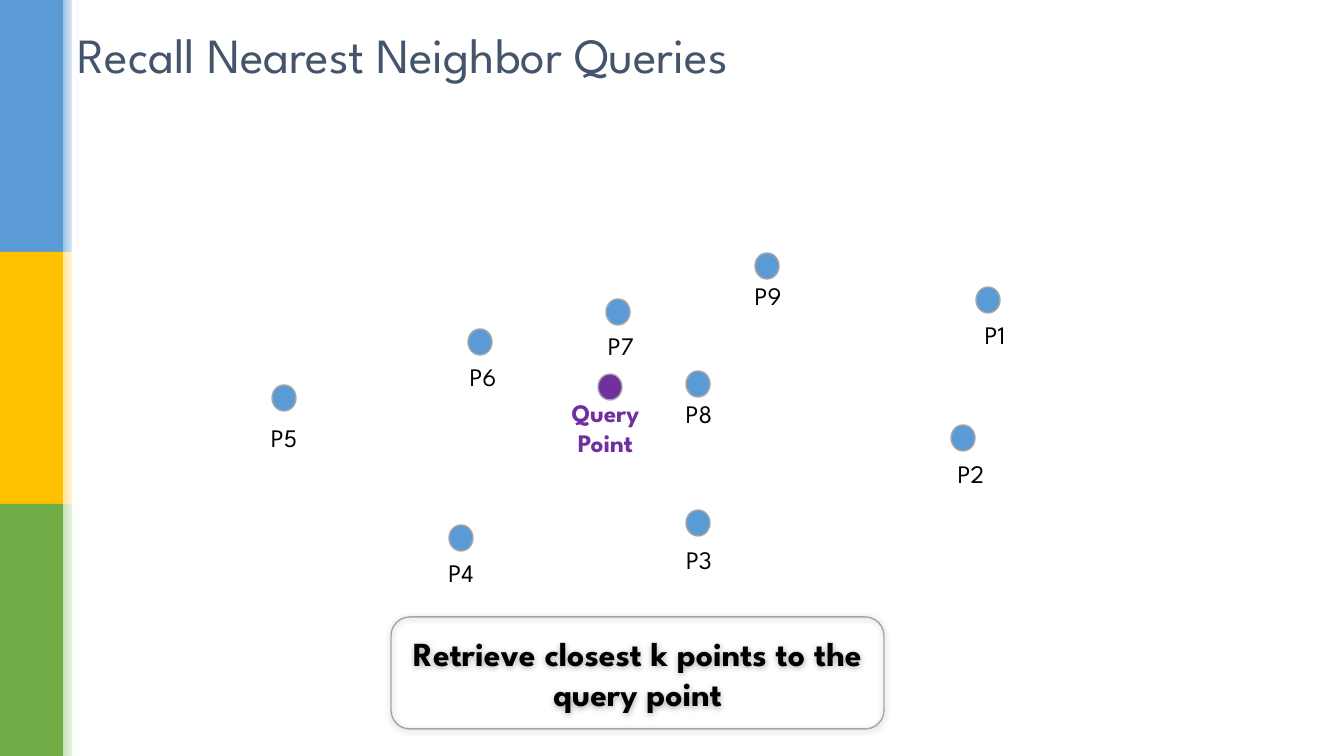
import pptx
import pptx.util
import pptx.dml.color
import pptx.enum.shapes
import pptx.enum.text
import pptx.oxml
import pptx.oxml.ns

SHAPES = pptx.enum.shapes.MSO_SHAPE
ALIGN = pptx.enum.text.PP_ALIGN


def px(length):
    return pptx.util.Emu(round(length * 914400 / 100.8))


def color(hex_string):
    return pptx.dml.color.RGBColor.from_string(hex_string)


class Canvas:
    font = "League Spartan"
    outline = "A5A5A5"

    def __init__(self, slide):
        self.slide = slide

    def shape(self, kind, left, top, width, height, fill=None, line=None):
        shape = self.slide.shapes.add_shape(kind, px(left), px(top), px(width), px(height))
        shape.shadow.inherit = False
        if fill:
            shape.fill.solid()
            shape.fill.fore_color.rgb = color(fill)
        else:
            shape.fill.background()
        if line:
            shape.line.color.rgb = color(line)
            shape.line.width = pptx.util.Pt(1)
        else:
            shape.line.fill.background()
        return shape

    def fade(self, left, top, width, height, start):
        strip = self.shape(SHAPES.RECTANGLE, left, top, width, height)
        strip.fill.gradient()
        strip.fill.gradient_angle = 0
        for stop, shade in zip(strip.fill.gradient_stops, (start, "FFFFFF")):
            stop.color.rgb = color(shade)

    def dot(self, left, top, fill):
        self.shape(SHAPES.OVAL, left, top, 24, 26, fill, self.outline)

    def set_text(self, shape, text, size, ink, bold=False, align=ALIGN.CENTER):
        frame = shape.text_frame
        frame.word_wrap = True
        frame.vertical_anchor = pptx.enum.text.MSO_ANCHOR.MIDDLE
        paragraph = frame.paragraphs[0]
        paragraph.text = text
        paragraph.alignment = align
        paragraph.font.name = self.font
        paragraph.font.size = pptx.util.Pt(size)
        paragraph.font.bold = bold
        paragraph.font.color.rgb = color(ink)

    def text(self, left, top, width, height, text, size, ink, **style):
        box = self.slide.shapes.add_textbox(px(left), px(top), px(width), px(height))
        self.set_text(box, text, size, ink, **style)

    def callout(self, left, top, width, height, text):
        callout = self.shape(SHAPES.ROUNDED_RECTANGLE, left, top, width, height, line=self.outline)
        effects = callout._element.spPr.find(pptx.oxml.ns.qn("a:effectLst"))
        effects.append(pptx.oxml.parse_xml(
            f'<a:outerShdw {pptx.oxml.ns.nsdecls("a")} blurRad="63500" dist="12700" '
            'dir="5400000" algn="ctr" rotWithShape="0"><a:srgbClr val="000000">'
            '<a:alpha val="32000"/></a:srgbClr></a:outerShdw>'))
        self.set_text(callout, text, 24, "000000", bold=True)


BANDS = [("5B9BD5", "9DC3E6"), ("FFC000", "FFE699"), ("70AD47", "C5E0B4")]
BAND_HEIGHT = 252
POINTS = {
    "P1": ((976, 287), (961, 312)),
    "P2": ((951, 425), (937, 451)),
    "P3": ((686, 510), (665, 537)),
    "P4": ((449, 525), (427, 550)),
    "P5": ((272, 385), (250, 415)),
    "P6": ((468, 329), (449, 354)),
    "P7": ((606, 299), (587, 323)),
    "P8": ((686, 371), (665, 391)),
    "P9": ((755, 253), (734, 273)),
}
QUERY_PURPLE = "7030A0"


def main():
    deck = pptx.Presentation()
    deck.slide_width, deck.slide_height = px(1344), px(756)
    canvas = Canvas(deck.slides.add_slide(deck.slide_layouts[6]))

    for row, (band, tint) in enumerate(BANDS):
        canvas.shape(SHAPES.RECTANGLE, 0, row * BAND_HEIGHT, 63, BAND_HEIGHT, band)
        canvas.fade(63, row * BAND_HEIGHT, 16, BAND_HEIGHT, tint)
    canvas.shape(SHAPES.RECTANGLE, 72, 0, 5, 756, "FFFFFF")

    canvas.text(68, 20, 1159, 67, "Recall Nearest Neighbor Queries", 35.1, "44546A",
                align=ALIGN.LEFT)
    for point, (dot_at, label_at) in POINTS.items():
        canvas.dot(*dot_at, "5B9BD5")
        canvas.text(*label_at, 68, 45, point, 18, "000000")

    canvas.callout(391, 617, 493, 112, "Retrieve closest k points to the query point")
    canvas.dot(598, 374, QUERY_PURPLE)
    canvas.text(540, 405, 131, 45, "Query Point", 18, QUERY_PURPLE, bold=True)

    deck.save("out.pptx")


if __name__ == "__main__":
    main()
